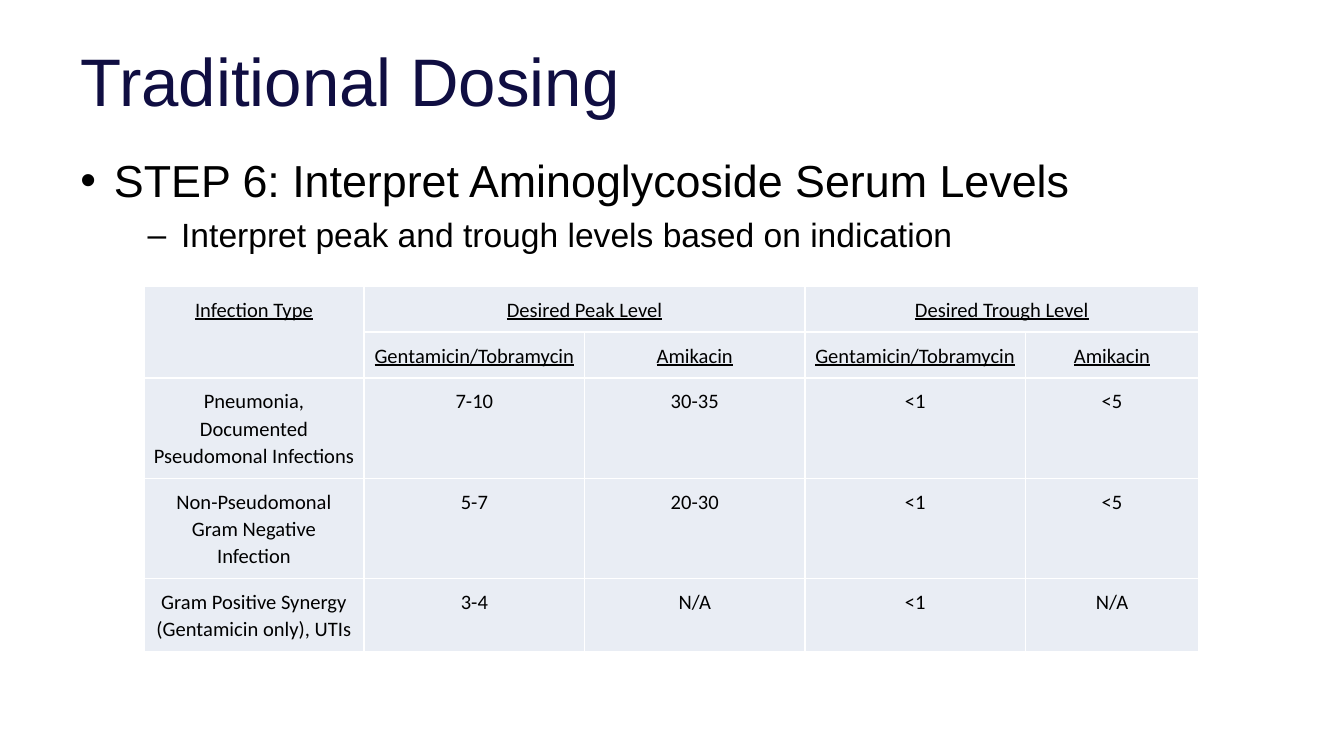
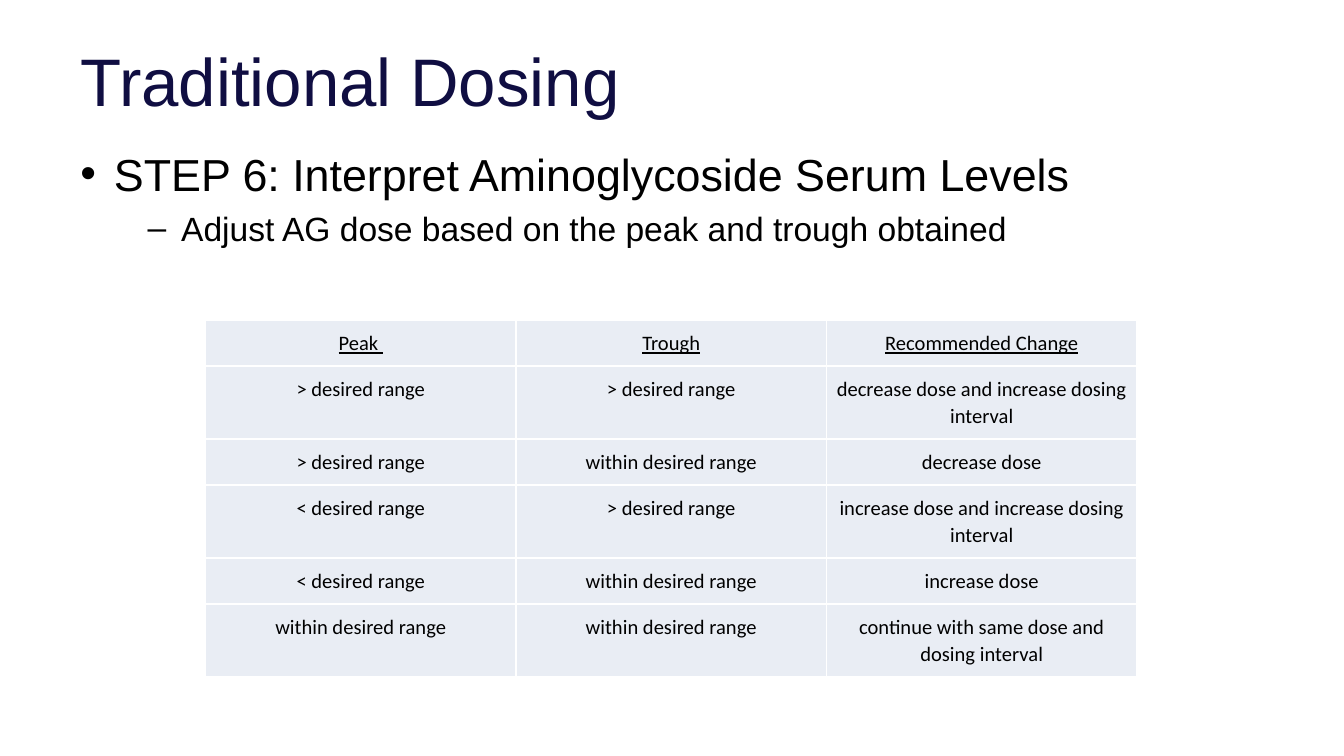
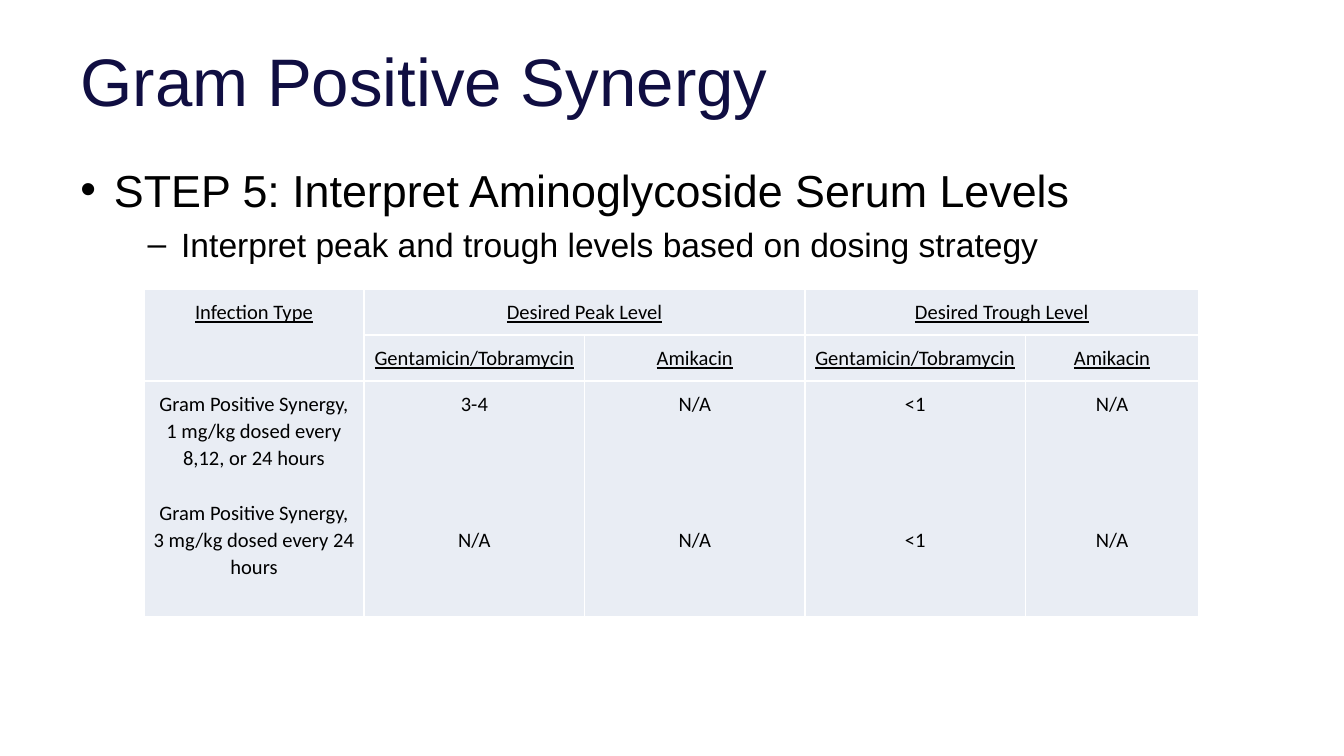
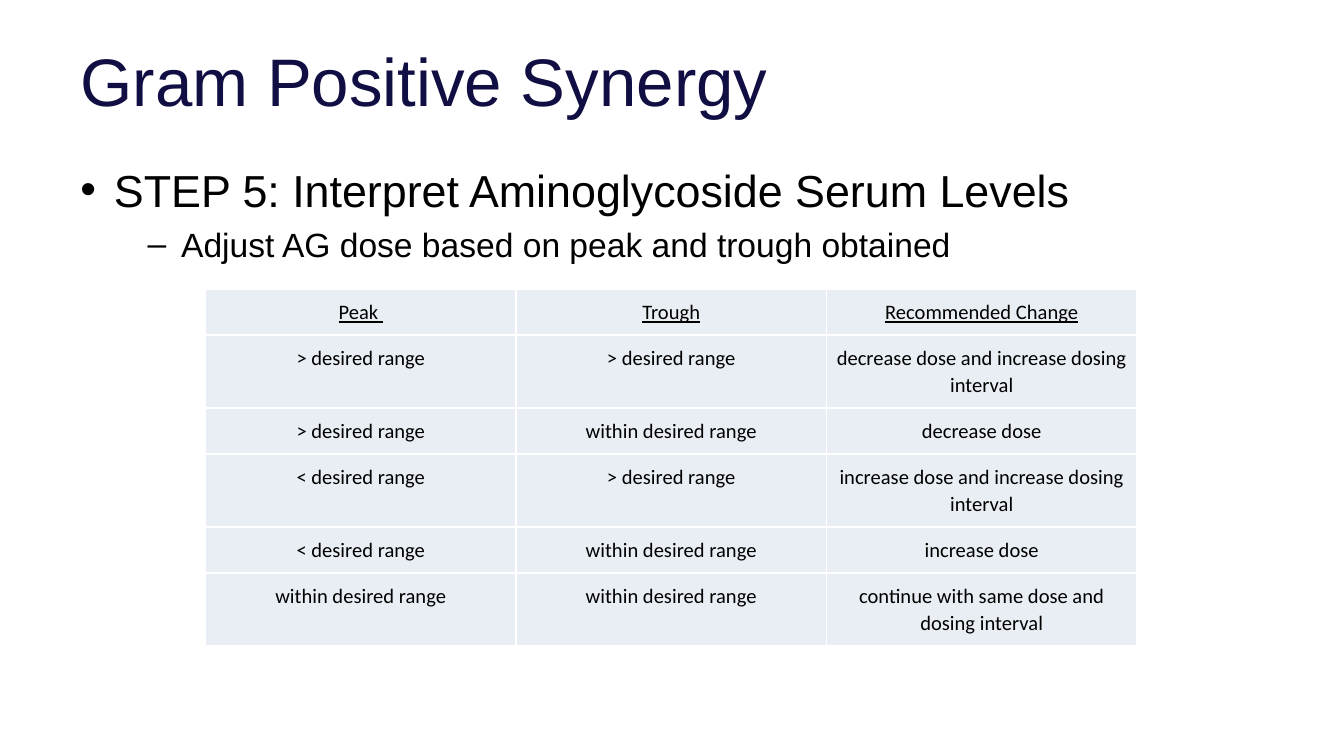
"""Build four slides on aminoglycoside serum levels and dose adjustment."""
from dataclasses import dataclass

from lxml.etree import SubElement
from pptx import Presentation
from pptx.dml.color import RGBColor
from pptx.enum.text import MSO_ANCHOR, PP_ALIGN
from pptx.oxml.ns import qn
from pptx.util import Inches, Pt


@dataclass(frozen=True)
class Theme:
    navy: str = "100E42"
    black: str = "000000"
    white: str = "FFFFFF"
    cell: str = "E9EDF4"
    head_font: str = "Arial"
    table_font: str = "Calibri"
    title: int = 36
    step: int = 24
    detail: int = 18
    table: int = 11
    table_line: float = 14.55


T = Theme()

DRUGS = ["Gentamicin/Tobramycin ", "Amikacin"]
LEVEL_HEADER = [
    ["Infection Type", "Desired Peak Level", None, "Desired Trough Level", None],
    [None, *DRUGS, *DRUGS],
]
LEVEL_MERGES = [((0, 0), (1, 0)), ((0, 1), (0, 2)), ((0, 3), (0, 4))]
LEVEL_COLS = [1.64] * 4 + [1.29]

LEVELS_BY_INDICATION = dict(
    left=1.07, cols=LEVEL_COLS, header_rows=2, merges=LEVEL_MERGES,
    lines=[1, 1, 3, 3, 2],
    rows=LEVEL_HEADER + [
        ["Pneumonia, Documented Pseudomonal Infections ", "7-10", "30-35", "<1", "<5"],
        ["Non-Pseudomonal Gram Negative Infection", "5-7", "20-30", "<1", "<5"],
        ["Gram Positive Synergy (Gentamicin only), UTIs", "3-4", "N/A", "<1", "N/A"],
    ])

LEVELS_BY_STRATEGY = dict(
    left=1.07, cols=LEVEL_COLS, header_rows=2, merges=LEVEL_MERGES,
    lines=[1, 1, 8],
    rows=LEVEL_HEADER + [[
        ("Gram Positive Synergy, 1 mg/kg dosed every 8,12, or 24 hours", 1,
         "Gram Positive Synergy, 3 mg/kg dosed every 24 hours"),
        ("3-4", 4, "N/A"), ("N/A", 4, "N/A"), ("<1", 4, "<1"), ("N/A", 4, "N/A"),
    ]])

ABOVE, WITHIN, BELOW = "> desired range", "within desired range", "< desired range"
DOSE_CHANGES = dict(
    left=1.53, cols=[2.31] * 3, header_rows=1, merges=[],
    lines=[1, 2, 1, 2, 1, 2],
    rows=[
        ["Peak ", "Trough", "Recommended Change"],
        [ABOVE, ABOVE, "decrease dose and increase dosing interval"],
        [ABOVE, WITHIN, "decrease dose"],
        [BELOW, ABOVE, "increase dose and increase dosing interval"],
        [BELOW, WITHIN, "increase dose"],
        [WITHIN, WITHIN, "continue with same dose and dosing interval"],
    ])

TRADITIONAL, SYNERGY = "Traditional Dosing", "Gram Positive Synergy"
STEP = "STEP {}: Interpret Aminoglycoside Serum Levels"
SLIDES = [
    dict(title=TRADITIONAL, step=6, body_top=1.09, body_height=3.35,
         detail="Interpret peak and trough levels based on indication",
         table=LEVELS_BY_INDICATION, table_top=2.13),
    dict(title=TRADITIONAL, step=6, body_top=1.04, body_height=3.35,
         detail="Adjust AG dose based on the peak and trough obtained",
         table=DOSE_CHANGES, table_top=2.38),
    dict(title=SYNERGY, step=5, body_top=1.16, body_height=3.35,
         detail="Interpret peak and trough levels based on dosing strategy",
         table=LEVELS_BY_STRATEGY, table_top=2.15),
    dict(title=SYNERGY, step=5, body_top=1.16, body_height=3.65,
         detail="Adjust AG dose based on peak and trough obtained",
         table=DOSE_CHANGES, table_top=2.15),
]

SLIDE_WIDTH = 10
SLIDE_HEIGHT = SLIDE_WIDTH * 9 / 16
CELL_INSET = 0.07
LINE_HEIGHT = T.table_line / 72


def add_run(p, text, size, font=T.head_font, color=T.black, underline=None):
    r = p.add_run()
    r.text = text
    r.font.size, r.font.name, r.font.underline = Pt(size), font, underline
    r.font.color.rgb = RGBColor.from_string(color)


def add_title(slide, text):
    sp = slide.shapes.title
    sp.left, sp.top, sp.width, sp.height = map(Inches, (0.5, 0.31, 9, 0.85))
    tf = sp.text_frame
    tf.vertical_anchor, tf.margin_top = MSO_ANCHOR.TOP, Inches(0.05)
    p = tf.paragraphs[0]
    p.alignment, p.line_spacing = PP_ALIGN.LEFT, 0.9
    add_run(p, text, T.title, color=T.navy)


def set_bullet(p, char, indent):
    pPr = p._p.get_or_add_pPr()
    pPr.set("marL", str(Inches(indent)))
    pPr.set("indent", str(Inches(-0.25)))
    SubElement(pPr, qn("a:buFont"), typeface=T.head_font)
    SubElement(pPr, qn("a:buChar"), char=char)


def add_body(slide, top, height, step, detail):
    sp = slide.shapes.add_textbox(*map(Inches, (0.5, top, 9, height)))
    tf = sp.text_frame
    tf.word_wrap, tf.margin_top = True, Inches(0.05)
    p = tf.paragraphs[0]
    set_bullet(p, "•", 0.25)
    add_run(p, STEP.format(step), T.step)
    p = tf.add_paragraph()
    p.level = 1
    set_bullet(p, "–", 0.75)
    p.space_before = Pt(4)
    add_run(p, detail, T.detail)


def set_borders(cell):
    tcPr = cell._tc.get_or_add_tcPr()
    for side in ("lnL", "lnR", "lnT", "lnB"):
        ln = SubElement(tcPr, qn(f"a:{side}"), w=str(Pt(1)))
        fill = SubElement(ln, qn("a:solidFill"))
        SubElement(fill, qn("a:srgbClr"), val=T.white)


def fill_cell(cell, content, underline):
    set_borders(cell)
    cell.fill.solid()
    cell.fill.fore_color.rgb = RGBColor.from_string(T.cell)
    cell.margin_left = cell.margin_right = Inches(CELL_INSET)
    cell.margin_top = cell.margin_bottom = Inches(CELL_INSET)
    if content is None:
        return
    first, gap, *rest = content if isinstance(content, tuple) else (content, 0)
    tf = cell.text_frame
    for i, text in enumerate([first, *rest]):
        p = tf.add_paragraph() if i else tf.paragraphs[0]
        p.alignment, p.line_spacing = PP_ALIGN.CENTER, 1.07
        if i:
            p.space_before = Pt(gap * T.table_line)
        add_run(p, text, T.table, T.table_font, underline=underline)


def add_level_table(slide, top, left, cols, header_rows, merges, lines, rows):
    heights = [2 * CELL_INSET + LINE_HEIGHT * n for n in lines]
    box = map(Inches, (left, top, sum(cols), sum(heights)))
    table = slide.shapes.add_table(len(rows), len(cols), *box).table
    table.first_row = table.horz_banding = False
    for col, width in zip(table.columns, cols):
        col.width = Inches(width)
    for row, height in zip(table.rows, heights):
        row.height = Inches(height)
    for start, end in merges:
        table.cell(*start).merge(table.cell(*end))
    for i, row in enumerate(rows):
        for j, content in enumerate(row):
            fill_cell(table.cell(i, j), content, i < header_rows)


def main():
    prs = Presentation()
    prs.slide_width, prs.slide_height = Inches(SLIDE_WIDTH), Inches(SLIDE_HEIGHT)
    for item in SLIDES:
        slide = prs.slides.add_slide(prs.slide_layouts[5])
        add_title(slide, item["title"])
        add_body(slide, item["body_top"], item["body_height"], item["step"], item["detail"])
        add_level_table(slide, item["table_top"], **item["table"])
    prs.save("out.pptx")


if __name__ == "__main__":
    main()
